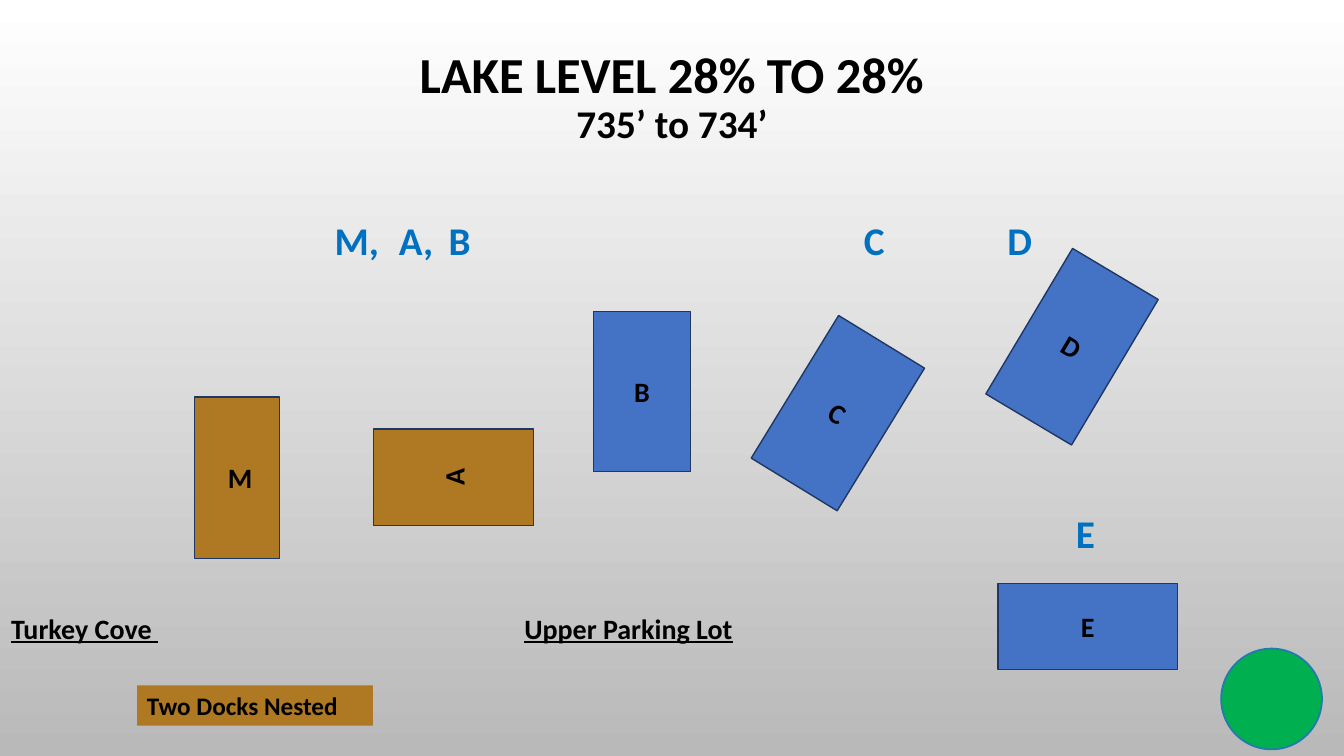
from dataclasses import dataclass

from pptx import Presentation
from pptx.dml.color import RGBColor
from pptx.enum.shapes import MSO_SHAPE
from pptx.enum.text import MSO_ANCHOR, MSO_AUTO_SIZE, PP_ALIGN
from pptx.util import Pt

RECTANGLE = MSO_SHAPE.RECTANGLE
OVAL = MSO_SHAPE.OVAL
MIDDLE = MSO_ANCHOR.MIDDLE
CENTER = PP_ALIGN.CENTER
LEFT = PP_ALIGN.LEFT
NO_AUTOFIT = MSO_AUTO_SIZE.NONE

FONT = "Calibri"
TITLE_ONLY_LAYOUT = 5
COLORS = {
    "text": "000000",
    "label": "0070C0",
    "nested": "AF7823",
    "dock": "4472C4",
    "dock_line": "1F3763",
    "status": "00B050",
    "status_line": "2379B0",
    "sky": "FFFFFF",
    "ground": "B9B9B9",
}


@dataclass(frozen=True)
class Dock:
    name: str
    left: float
    top: float
    width: float
    height: float
    color: str = "dock"
    rotation: float = 0


@dataclass(frozen=True)
class Label:
    text: str
    left: float
    middle: float
    width: float = 40
    size: float = 28
    color: str = "label"
    underline: bool = False


DOCK_ROW = 171
PLACE_ROW = 448.5

DOCKS = [
    Dock("A", 289.4, 283.7, 69.1, 114.5, "nested", 270),
    Dock("B", 424.1, 222.5, 69.1, 114.5),
    Dock(" M", 139, 283.7, 60.5, 115.2, "nested"),
    Dock("C", 562.5, 235.4, 72, 119.5, rotation=31.5),
    Dock("D", 730.1, 187.2, 71.3, 121, rotation=30.8),
    Dock("E", 712.8, 416.9, 128.2, 61.2),
]

LABELS = [
    Label("M,", 239, DOCK_ROW),
    Label("A,", 285, DOCK_ROW),
    Label("B", 320.5, DOCK_ROW),
    Label("C", 617, DOCK_ROW),
    Label("D", 719.5, DOCK_ROW),
    Label("E", 768.5, 380.5),
    Label("Turkey Cove ", 7.9, PLACE_ROW, 150, 20, "text", True),
    Label("Upper Parking Lot", 374.5, PLACE_ROW, 200, 20, "text", True),
]


def rgb(name: str) -> RGBColor:
    return RGBColor.from_string(COLORS[name])


def style_paragraph(para, size: float, color: str, alignment) -> None:
    para.alignment = alignment
    para.font.name = FONT
    para.font.size = Pt(size)
    para.font.bold = True
    para.font.color.rgb = rgb(color)


def paint_background(page) -> None:
    fill = page.background.fill
    fill.gradient()
    fill.gradient_angle = 270
    for stop, color, position in zip(fill.gradient_stops, ("sky", "ground"), (0, 1)):
        stop.color.rgb = rgb(color)
        stop.position = position


def write_title(page) -> None:
    title = page.shapes.title
    title.left, title.top, title.width, title.height = Pt(72), Pt(25.2), Pt(816), Pt(90)
    frame = title.text_frame
    frame.auto_size = NO_AUTOFIT
    frame.vertical_anchor = MIDDLE
    para = frame.paragraphs[0]
    style_paragraph(para, 36, "text", CENTER)
    para.line_spacing = 0.9
    para.add_run().text = "LAKE LEVEL 28% TO 28%"
    para.add_line_break()
    span = para.add_run()
    span.text = "735’ to 734’"
    span.font.size = Pt(28)


def add_filled_shape(page, kind, left: float, top: float, width: float, height: float, color: str):
    shape = page.shapes.add_shape(kind, Pt(left), Pt(top), Pt(width), Pt(height))
    shape.shadow.inherit = False
    shape.fill.solid()
    shape.fill.fore_color.rgb = rgb(color)
    return shape


def outline(shape, color: str, weight: float) -> None:
    shape.line.color.rgb = rgb(color)
    shape.line.width = Pt(weight)


def draw_dock(page, dock: Dock) -> None:
    shape = add_filled_shape(page, RECTANGLE, dock.left, dock.top, dock.width, dock.height, dock.color)
    outline(shape, "dock_line", 1)
    shape.rotation = dock.rotation
    frame = shape.text_frame
    frame.vertical_anchor = MIDDLE
    frame.text = dock.name
    style_paragraph(frame.paragraphs[0], 20, "text", CENTER)


def draw_label(page, label: Label) -> None:
    height = label.size * 1.25
    box = page.shapes.add_textbox(
        Pt(label.left), Pt(label.middle - height / 2), Pt(label.width), Pt(height)
    )
    frame = box.text_frame
    frame.word_wrap = True
    frame.vertical_anchor = MIDDLE
    frame.margin_left = frame.margin_right = frame.margin_top = frame.margin_bottom = 0
    frame.text = label.text
    para = frame.paragraphs[0]
    style_paragraph(para, label.size, label.color, LEFT)
    para.font.underline = label.underline


def draw_nested_note(page) -> None:
    note = add_filled_shape(page, RECTANGLE, 97.9, 489.6, 168.5, 28.8, "nested")
    note.line.fill.background()
    frame = note.text_frame
    frame.word_wrap = False
    frame.vertical_anchor = MIDDLE
    frame.text = "Two Docks Nested"
    style_paragraph(frame.paragraphs[0], 18, "text", LEFT)


def main() -> None:
    deck = Presentation()
    deck.slide_width, deck.slide_height = Pt(960), Pt(540)
    page = deck.slides.add_slide(deck.slide_layouts[TITLE_ONLY_LAYOUT])
    paint_background(page)
    write_title(page)
    for dock in DOCKS:
        draw_dock(page, dock)
    for label in LABELS:
        draw_label(page, label)
    draw_nested_note(page)
    status = add_filled_shape(page, OVAL, 872.3, 463.3, 72, 72, "status")
    outline(status, "status_line", 1.25)
    deck.save("out.pptx")


if __name__ == "__main__":
    main()
